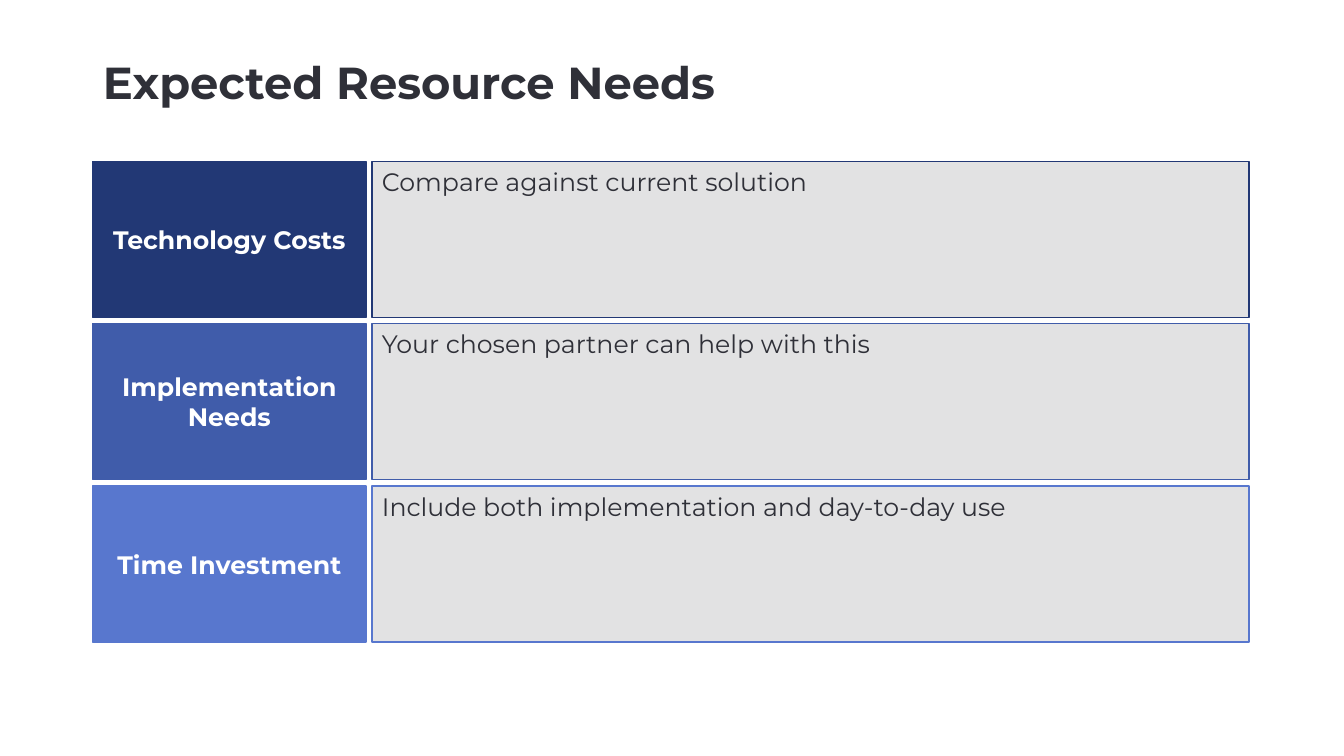
from dataclasses import dataclass

from pptx import Presentation
from pptx.dml.color import RGBColor
from pptx.enum.shapes import MSO_SHAPE
from pptx.enum.text import MSO_ANCHOR, PP_ALIGN
from pptx.util import Inches, Pt


@dataclass(frozen=True)
class Theme:
    font: str = "Montserrat"
    dark: str = "2F3038"
    white: str = "FFFFFF"
    panel: str = "E2E2E3"
    title_size: int = 32
    body_size: int = 18
    line_width: int = 1


THEME = Theme()

NEEDS = [
    ("Technology Costs", "Compare against current solution", "223875"),
    ("Implementation Needs", "Your chosen partner can help with this", "405CAA"),
    ("Time Investment", "Include both implementation and day-to-day use", "5877CE"),
]

LEFT, TOP = 0.92, 1.6
LABEL_WIDTH, DETAIL_WIDTH, ROW_HEIGHT = 2.71, 8.7, 1.55
GAP = 0.06


def write_text(tf, text, size, color, bold=False, align=PP_ALIGN.LEFT,
               anchor=MSO_ANCHOR.MIDDLE):
    tf.word_wrap = True
    tf.vertical_anchor = anchor
    p = tf.paragraphs[0]
    p.alignment = align
    r = p.add_run()
    r.text = text
    r.font.name = THEME.font
    r.font.size = Pt(size)
    r.font.bold = bold
    r.font.color.rgb = RGBColor.from_string(color)
    return p


def add_title(s, text):
    title = s.shapes.title
    title.left, title.top = Inches(LEFT), Inches(0.4)
    title.width, title.height = Inches(11.5), Inches(0.89)
    p = write_text(title.text_frame, text, THEME.title_size, THEME.dark, bold=True)
    p.line_spacing = 0.9


def add_box(s, left, top, width, fill, line):
    sp = s.shapes.add_shape(MSO_SHAPE.RECTANGLE, Inches(left), Inches(top),
                            Inches(width), Inches(ROW_HEIGHT))
    sp.shadow.inherit = False
    sp.fill.solid()
    sp.fill.fore_color.rgb = RGBColor.from_string(fill)
    sp.line.color.rgb = RGBColor.from_string(line)
    sp.line.width = Pt(THEME.line_width)
    return sp.text_frame


def add_need(s, top, label, detail, color):
    """Add one row: a coloured label and its outlined detail panel."""
    tf = add_box(s, LEFT, top, LABEL_WIDTH, color, color)
    write_text(tf, label, THEME.body_size, THEME.white, bold=True,
               align=PP_ALIGN.CENTER)
    tf = add_box(s, LEFT + LABEL_WIDTH + GAP, top, DETAIL_WIDTH, THEME.panel, color)
    write_text(tf, detail, THEME.body_size, THEME.dark, anchor=MSO_ANCHOR.TOP)


def main():
    prs = Presentation()
    prs.slide_width, prs.slide_height = Inches(13.33), Inches(7.5)
    s = prs.slides.add_slide(prs.slide_layouts[5])
    add_title(s, "Expected Resource Needs")
    for i, (label, detail, color) in enumerate(NEEDS):
        add_need(s, TOP + i * (ROW_HEIGHT + GAP), label, detail, color)
    prs.save("out.pptx")


if __name__ == "__main__":
    main()
